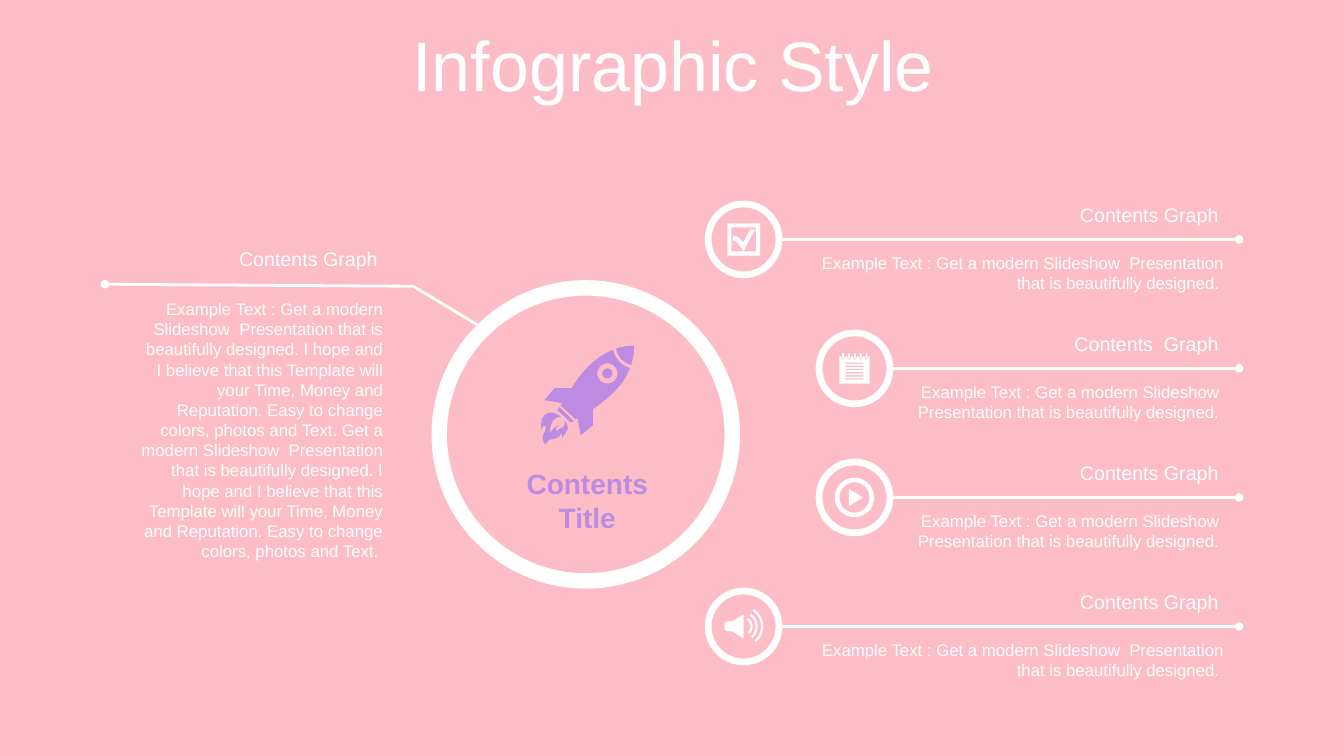
from math import cos, radians, sin

from lxml.etree import SubElement
from pptx import Presentation
from pptx.dml.color import RGBColor
from pptx.enum.shapes import MSO_CONNECTOR, MSO_SHAPE
from pptx.enum.text import MSO_ANCHOR, MSO_AUTO_SIZE, PP_ALIGN
from pptx.oxml.ns import qn
from pptx.util import Inches, Pt

COLORS = {"back": "FDBDC7", "main": "FFFFFF", "accent": "BE8BE2"}
FONT = "Arial"
SHORT = "Example Text : Get a modern Slideshow  Presentation that is beautifully designed. "
LONG = (SHORT + "I hope and I believe that this Template will your Time, Money and "
        "Reputation. Easy to change colors, photos and Text. ")
LONG += LONG.replace("Example Text : ", "")


def color(name):
    return RGBColor.from_string(COLORS[name])


def paint(shape, name):
    shape.shadow.inherit = False
    shape.fill.solid()
    shape.fill.fore_color.rgb = color(name)
    shape.line.fill.background()


def style(para, size, align, name="main", bold=False):
    para.alignment = align
    para.font.name = FONT
    para.font.size = Pt(size)
    para.font.bold = bold
    para.font.color.rgb = color(name)


def write(slide, box, lines, size, align=PP_ALIGN.RIGHT, name="main", bold=False):
    frame = slide.shapes.add_textbox(*map(Inches, box)).text_frame
    frame.word_wrap = True
    frame.vertical_anchor = MSO_ANCHOR.MIDDLE
    frame.text = lines
    for para in frame.paragraphs:
        style(para, size, align, name, bold)


def rule(slide, start, end, dot=True):
    """Draw a straight line, with a dot at its end if asked."""
    link = slide.shapes.add_connector(
        MSO_CONNECTOR.STRAIGHT, *map(Inches, start + end))
    link.line.width = Pt(2)
    link.line.color.rgb = color("main")
    props = link._element.spPr
    if dot:
        SubElement(props.find(qn("a:ln")), qn("a:tailEnd"), type="oval")
    SubElement(props, qn("a:effectLst"))


def ring(slide, left, top, size, band):
    shape = slide.shapes.add_shape(
        MSO_SHAPE.DONUT, *map(Inches, (left, top, size, size)))
    shape.adjustments[0] = band
    paint(shape, "main")


def flatten(loop, steps=8):
    """Turn points and six-number Bezier curves into points."""
    points = []
    for item in loop:
        if len(item) == 2:
            points.append(item)
            continue
        ends = [points[-1], item[:2], item[2:4], item[4:]]
        for step in range(1, steps + 1):
            t = step / steps
            parts = ((1 - t) ** 3, 3 * t * (1 - t) ** 2, 3 * t * t * (1 - t), t ** 3)
            points.append(tuple(
                sum(part * end[axis] for part, end in zip(parts, ends))
                for axis in (0, 1)))
    return points


def trace(slide, left, top, loops, name="main"):
    """Draw closed loops, given in hundredths of an inch, as one shape."""
    builder = None
    for loop in loops:
        points = [(Inches(left + x / 100), Inches(top + y / 100))
                  for x, y in flatten(loop)]
        if builder is None:
            builder = slide.shapes.build_freeform(*points[0], scale=1.0)
        else:
            builder.move_to(*points[0])
        builder.add_line_segments(points[1:], close=True)
    paint(builder.convert_to_shape(), name)


def arc(x, y, radius, start=0, end=360, steps=40):
    angles = [radians(start + (end - start) * i / steps) for i in range(steps + 1)]
    return [(x + radius * cos(a), y + radius * sin(a)) for a in angles]


def block(left, top, right, bottom):
    return [(left, top), (right, top), (right, bottom), (left, bottom)]


def rocket():
    flame = [(20, 71), (15, 69, 7, 76, 9, 87), (11, 81, 15, 80, 18, 79),
             (17, 80, 13, 81, 15, 85), (18, 80, 24, 84, 23, 74),
             (30, 83, 24, 85, 21, 91), (20, 90, 21, 84, 20, 87),
             (15, 96, 8, 89, 4, 98), (-3, 90, 6, 85, 4, 80),
             (3, 79, 1, 79, 0, 84), (-3, 63, 13, 64, 20, 71)]
    strap = [(18, 61), (32, 75), (29, 76), (16, 64)]
    hull = [(71, 4), (73, 13, 80, 20, 88, 22), (81, 41, 65, 53, 51, 63),
            (51, 79), (39, 89), (36, 72), (34, 73), (19, 59), (21, 57),
            (3, 54), (13, 42), (30, 42), (39, 27, 52, 12, 71, 4)]
    nose = [(92, 0), (92, 7, 91, 13, 89, 19), (81, 17, 76, 11, 74, 3),
            (79, 1, 85, 0, 92, 0)]
    return [flame, strap, hull, nose, arc(65.5, 27.5, 10), arc(65.5, 27.5, 5)]


def check():
    tick = [(4, 4), (4, 28), (16, 28), (13, 24, 10, 17, 5, 17), (6, 12),
            (12, 14, 13, 16, 16, 19), (18, 14, 20, 11, 23, 6), (28, 6),
            (24, 12, 19, 21, 16, 28), (28.5, 28), (28.5, 4)]
    return [block(0, 0, 32.5, 32), tick]


def notes():
    pins = [3.8 + 5.8 * i for i in range(5)]
    page = [(0, 3)]
    for x in pins:
        page += [(x - 2, 3), (x - 2, 4), (x - 1, 6), (x + 1, 6), (x + 2, 4), (x + 2, 3)]
    page += [(30, 3), (30, 30), (0, 30)]
    slots = [block(6, 9.2 + 3.15 * i, 24, 10.5 + 3.15 * i) for i in range(6)]
    return [page] + slots + [block(x - 1, 0, x + 1, 5) for x in pins]


def play():
    return [arc(19.5, 19.5, 19.5), arc(19.5, 19.5, 15), [(14, 11), (28, 19.5), (14, 28)]]


def sound():
    horn = [(19, 5), (19, 29), (8, 22), (3, 22), (0, 20), (0, 14), (3, 12), (8, 12)]
    waves = [arc(18, 17, r, -57, 49) + arc(18, 17, r - 2.2, 49, -57)
             for r in (10, 15, 20.5)]
    return [horn] + waves


def title(slide, box):
    head = slide.shapes.title
    head.left, head.top, head.width, head.height = map(Inches, box)
    frame = head.text_frame
    frame.text = "Infographic Style"
    frame.auto_size = MSO_AUTO_SIZE.NONE
    frame.vertical_anchor = MSO_ANCHOR.MIDDLE
    para = frame.paragraphs[0]
    para.line_spacing = 0.8
    para.space_before = Pt(10)
    style(para, 50, PP_ALIGN.CENTER)


def story(slide, left, top, width):
    write(slide, (left, top, width, 0.34), "Contents Graph ", 14)
    write(slide, (left, top + 0.5, width, 2.73), LONG, 12)
    bend = (left + 2.84, top + 0.44)
    rule(slide, bend, (left - 0.22, top + 0.42))
    rule(slide, bend, (left + 3.47, top + 0.82), dot=False)


def hub(slide, left, top, size):
    ring(slide, left, top, size, 0.05)
    trace(slide, left + 1.09, top + 0.65, rocket(), "accent")
    write(slide, (left + 0.75, top + 1.8, 1.59, 0.77), "Contents\nTitle", 20,
          PP_ALIGN.CENTER, "accent", True)


def card(slide, left, top, inset, heading, icon, wide, high):
    size, right = 0.77, 12.24
    mid = top + size / 2
    ring(slide, left, top, size, 0.087)
    trace(slide, left + (size - wide) / 2, mid - high / 2, icon())
    rule(slide, (left + size, mid), (right + 0.05, mid))
    start = left + inset
    write(slide, (start, top - 0.03, right - start, 0.34), heading, 14)
    write(slide, (start, top + 0.47, right - start, 0.5), SHORT, 12)


def main():
    deck = Presentation()
    deck.slide_width, deck.slide_height = Inches(13.33), Inches(7.5)
    slide = deck.slides.add_slide(deck.slide_layouts[5])
    slide.background.fill.solid()
    slide.background.fill.fore_color.rgb = color("back")
    title(slide, (0.35, 0.31, 12.66, 0.79))
    story(slide, 1.26, 2.4, 2.64)
    hub(slide, 4.28, 2.78, 3.06)
    cards = [(6.99, 0.82, "Contents Graph ", check, 0.32, 0.32),
             (8.09, 0.88, "Contents  Graph ", notes, 0.3, 0.3),
             (8.09, 0.88, "Contents Graph ", play, 0.39, 0.39),
             (6.99, 0.82, "Contents Graph ", sound, 0.38, 0.34)]
    for row, (left, *rest) in enumerate(cards):
        card(slide, left, 1.99 + 1.28 * row, *rest)
    deck.save("out.pptx")


if __name__ == "__main__":
    main()
